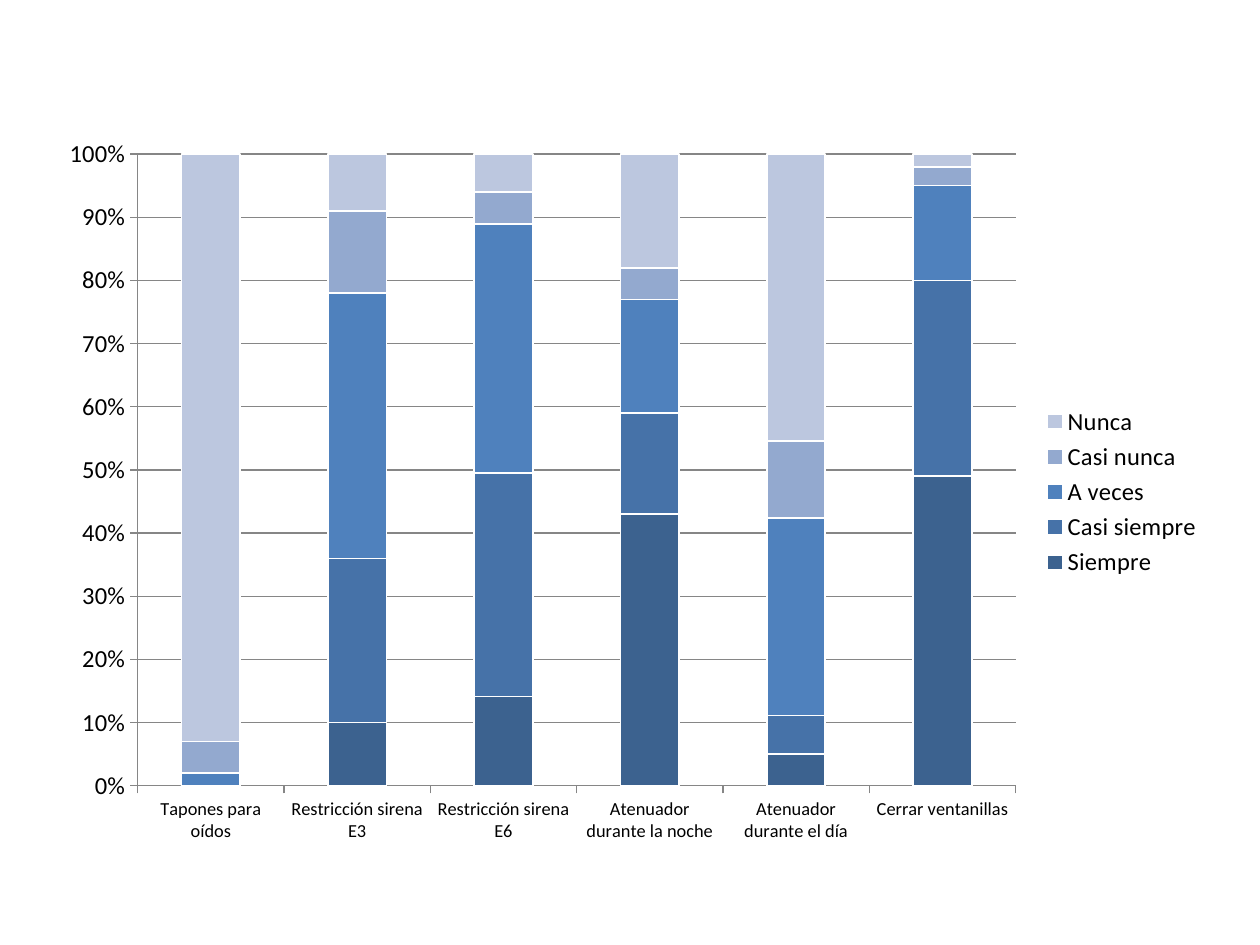
from lxml import etree
from pptx import Presentation
from pptx.chart.data import CategoryChartData
from pptx.dml.color import RGBColor
from pptx.enum.chart import XL_CHART_TYPE as ChartType
from pptx.enum.chart import XL_LEGEND_POSITION as LegendPosition
from pptx.enum.chart import XL_TICK_MARK as TickMark
from pptx.oxml.ns import qn
from pptx.util import Pt

BLACK = RGBColor(0x00, 0x00, 0x00)
WHITE = RGBColor(0xFF, 0xFF, 0xFF)
GRAY = RGBColor(0x86, 0x86, 0x86)
BLUES = [
    RGBColor(0x3C, 0x62, 0x8F),
    RGBColor(0x46, 0x72, 0xA8),
    RGBColor(0x4F, 0x81, 0xBD),
    RGBColor(0x93, 0xA9, 0xCF),
    RGBColor(0xBC, 0xC7, 0xDF),
]

CATEGORIES = [
    "Tapones para oídos",
    "Restricción sirena E3",
    "Restricción sirena E6",
    "Atenuador durante la noche",
    "Atenuador durante el día",
    "Cerrar ventanillas",
]
ANSWERS = {
    "Siempre": [0, 10, 14, 43, 5, 49],
    "Casi siempre": [0, 26, 35, 16, 6, 31],
    "A veces": [2, 42, 39, 18, 31, 15],
    "Casi nunca": [5, 13, 5, 5, 12, 3],
    "Nunca": [93, 9, 6, 18, 45, 2],
}


def style_font(font, size):
    font.name = "Calibri"
    font.size = Pt(size)
    font.color.rgb = BLACK


presentation = Presentation()
presentation.slide_width = Pt(720)
presentation.slide_height = Pt(540)
slide = presentation.slides.add_slide(presentation.slide_layouts[6])

# Chart
chart_data = CategoryChartData()
chart_data.categories = CATEGORIES
for answer, values in ANSWERS.items():
    chart_data.add_series(answer, values)
chart = slide.shapes.add_chart(
    ChartType.COLUMN_STACKED_100, Pt(25.2), Pt(71.3), Pt(668.9), Pt(419.8), chart_data
).chart
chart.has_title = False
style_font(chart.font, 18)

# Columns
plot = chart.plots[0]
plot.gap_width = 150
plot.overlap = 100
plot.vary_by_categories = False
for series, blue in zip(plot.series, BLUES):
    series.format.fill.solid()
    series.format.fill.fore_color.rgb = blue
    series.format.line.color.rgb = WHITE
    series.format.line.width = Pt(1)

# Axes and gridlines
value_axis = chart.value_axis
for axis, size in ((chart.category_axis, 10.5), (value_axis, 14)):
    style_font(axis.tick_labels.font, size)
    axis.major_tick_mark = TickMark.OUTSIDE
    axis.minor_tick_mark = TickMark.NONE
    axis.format.line.color.rgb = GRAY
    axis.format.line.width = Pt(0.75)
value_axis.minimum_scale = 0
value_axis.maximum_scale = 1
value_axis.major_unit = 0.1
value_axis.tick_labels.number_format = "0%"
value_axis.tick_labels.number_format_is_linked = False
value_axis.has_major_gridlines = True
value_axis.major_gridlines.format.line.color.rgb = GRAY
value_axis.major_gridlines.format.line.width = Pt(0.75)

# Legend
chart.has_legend = True
chart.legend.position = LegendPosition.RIGHT
chart.legend.include_in_layout = False
style_font(chart.legend.font, 14)

# Plot area inside the chart, as fractions of its size
plot_area = plot._element.getparent()
for old_layout in plot_area.findall(qn("c:layout")):
    plot_area.remove(old_layout)
layout = etree.Element(qn("c:layout"))
plot_area.insert(0, layout)
manual_layout = etree.SubElement(layout, qn("c:manualLayout"))
for tag, value in (
    ("layoutTarget", "inner"), ("xMode", "edge"), ("yMode", "edge"),
    ("x", "0.08"), ("y", "0.04"), ("w", "0.75"), ("h", "0.86"),
):
    etree.SubElement(manual_layout, qn(f"c:{tag}")).set("val", value)

presentation.save("out.pptx")
